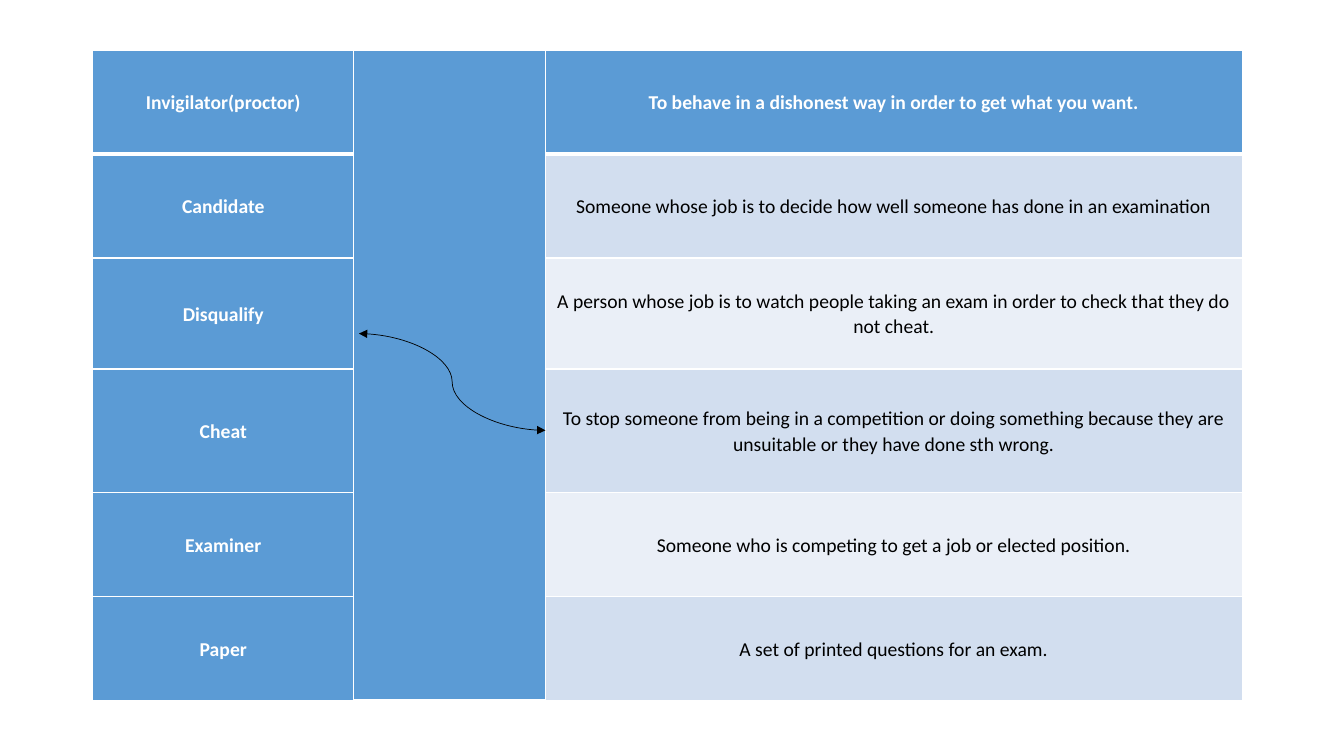
from dataclasses import dataclass

from lxml.etree import SubElement
from pptx import Presentation
from pptx.dml.color import RGBColor as RGB
from pptx.enum.shapes import MSO_CONNECTOR as Connector
from pptx.enum.text import MSO_ANCHOR as Anchor, PP_ALIGN as Align
from pptx.oxml.ns import qn
from pptx.util import Inches, Pt


@dataclass(frozen=True)
class Theme:
    font: str = "Calibri"
    size: int = 14
    header: str = "5B9BD5"
    bands: tuple = ("EAEFF7", "D2DEEF")
    light: str = "FFFFFF"
    dark: str = "000000"
    rule: int = 1
    header_rule: int = 3
    arrow: float = 0.5


theme = Theme()

vocabulary = [
    ("Invigilator(proctor)", "To behave in a dishonest way in order to get what you want."),
    ("Candidate", "Someone whose job is to decide how well someone has done in an examination"),
    ("Disqualify", "A person whose job is to watch people taking an exam in order to check that they do not cheat."),
    ("Cheat", "To stop someone from being in a competition or doing something because they are unsuitable or they have done sth wrong."),
    ("Examiner", "Someone who is competing to get a job or elected position."),
    ("Paper", "A set of printed questions for an exam."),
]
column_widths = [2.59, 1.9, 6.91]
row_heights = [1.03, 1.03, 1.1, 1.23, 1.03, 1.03]
left, top = 0.92, 0.5


def add_border(cell, side, width):
    border = SubElement(cell._tc.get_or_add_tcPr(), qn(f"a:ln{side}"), w=str(Pt(width)))
    fill = SubElement(border, qn("a:solidFill"))
    SubElement(fill, qn("a:srgbClr"), val=theme.light)


def fill_cell(cell, text, color, text_color, bold):
    cell.fill.solid()
    cell.fill.fore_color.rgb = RGB.from_string(color)
    cell.vertical_anchor = Anchor.MIDDLE
    cell.margin_left = cell.margin_right = Inches(0.07)
    cell.margin_top = cell.margin_bottom = 0
    paragraph = cell.text_frame.paragraphs[0]
    paragraph.text = text
    paragraph.alignment = Align.CENTER
    paragraph.line_spacing = 1.07
    paragraph.font.name = theme.font
    paragraph.font.size = Pt(theme.size)
    paragraph.font.bold = bold
    paragraph.font.color.rgb = RGB.from_string(text_color)


deck = Presentation()
deck.slide_width, deck.slide_height = Inches(13.33), Inches(7.5)
slide = deck.slides.add_slide(deck.slide_layouts[6])

# Matching table
matching = slide.shapes.add_table(
    len(row_heights), len(column_widths), Inches(left), Inches(top),
    Inches(sum(column_widths)), Inches(sum(row_heights))).table
for column, width in zip(matching.columns, column_widths):
    column.width = Inches(width)
for row, height in zip(matching.rows, row_heights):
    row.height = Inches(height)

for r, (term, definition) in enumerate(vocabulary):
    for c, text in enumerate((term, "", definition)):
        cell = matching.cell(r, c)
        for side in "LRTB":
            under_header = (r, side) in ((0, "B"), (1, "T"))
            add_border(cell, side, theme.header_rule if under_header else theme.rule)
        is_header = r == 0 or c < 2
        fill_cell(cell, text,
                  theme.header if is_header else theme.bands[r % 2],
                  theme.light if is_header else theme.dark, is_header)

# Empty column for drawing the matches
matching.cell(0, 1).merge(matching.cell(len(vocabulary) - 1, 1))

# Example match: Disqualify and its definition
match = slide.shapes.add_connector(
    Connector.CURVE, Inches(3.56), Inches(3.31), Inches(5.41), Inches(4.27))
match.line.color.rgb = RGB.from_string(theme.dark)
match.line.width = Pt(theme.arrow)
match_line = match.line._get_or_add_ln()
for end in ("headEnd", "tailEnd"):
    SubElement(match_line, qn(f"a:{end}"), type="triangle")
SubElement(match._element.spPr, qn("a:effectLst"))

deck.save("out.pptx")
